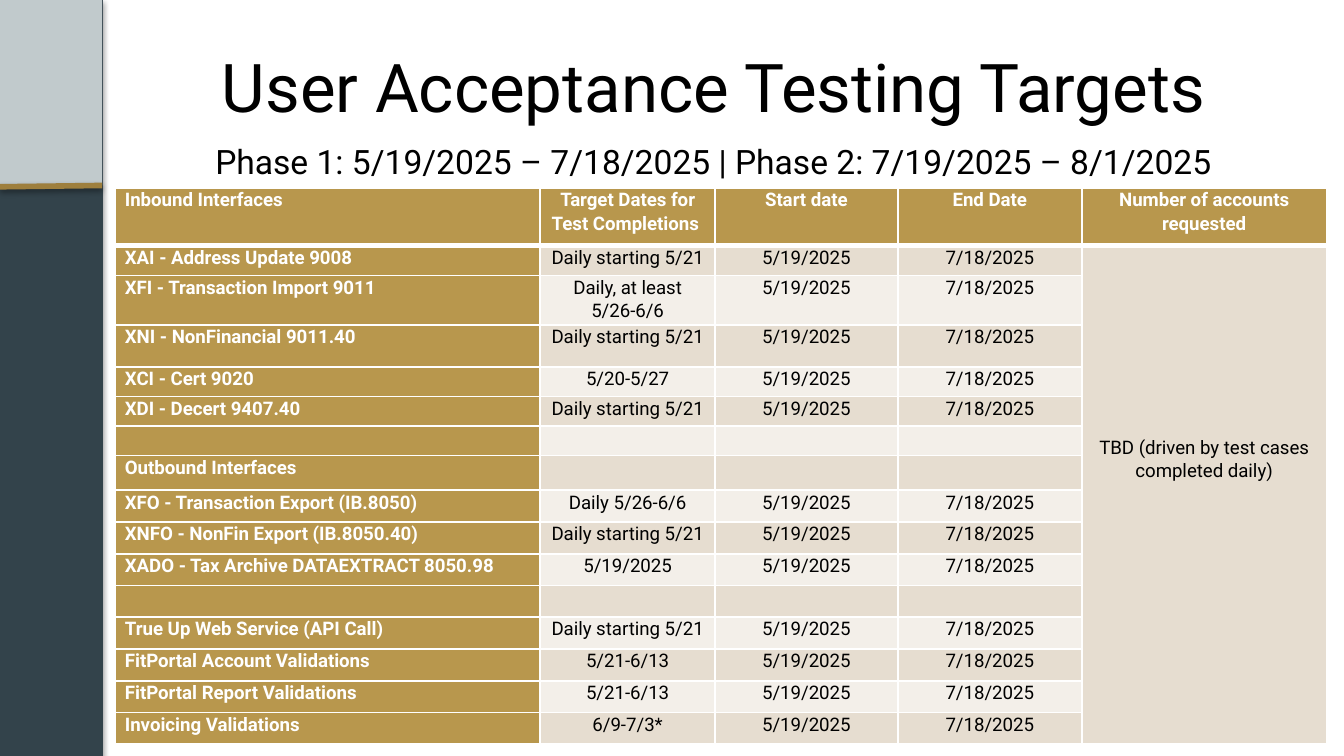
from dataclasses import dataclass

from lxml import etree
from pptx import Presentation
from pptx.dml.color import RGBColor
from pptx.enum.shapes import MSO_CONNECTOR, MSO_SHAPE
from pptx.enum.text import MSO_ANCHOR, PP_ALIGN
from pptx.oxml import parse_xml
from pptx.oxml.ns import nsdecls
from pptx.util import Inches, Pt

FONT = "Roboto"
SLIDE_WIDTH = 10
SLIDE_HEIGHT = SLIDE_WIDTH * 9 / 16
COLORS = {
    "slate": "33434B",
    "mist": "C1CACC",
    "bronze": "9E7F3D",
    "gold": "B8974D",
    "sand": "E6DDD0",
    "cream": "F3EFE9",
    "white": "FFFFFF",
    "black": "000000",
}


@dataclass
class Heading:
    text: str
    left: float
    top: float
    width: float
    height: float
    size: int
    anchor: MSO_ANCHOR


@dataclass
class Target:
    name: str
    dates: str = ""
    height: float = 0.22
    start: str = "5/19/2025"
    end: str = "7/18/2025"

    def values(self) -> list[str]:
        return [self.name, self.dates, self.start, self.end] if self.dates else [self.name, "", "", ""]


HEADINGS = [
    Heading("User Acceptance Testing Targets", 1.02, 0.17, 8.58, 0.94, 36, MSO_ANCHOR.MIDDLE),
    Heading("Phase 1: 5/19/2025 – 7/18/2025 | Phase 2: 7/19/2025 – 8/1/2025",
            0.86, 1, 8.9, 0.4, 18, MSO_ANCHOR.TOP),
]
COLUMN_TITLES = ["Inbound Interfaces", "Target Dates for Test Completions ", "Start date",
                 "End Date", "Number of accounts requested"]
COLUMN_WIDTHS = [3.16, 1.3, 1.36, 1.37, 1.82]
HEADER_HEIGHT = 0.43
EVEN_HEIGHT = 1.89 / 8
DAILY = "Daily starting 5/21"
TARGETS = [
    Target("XAI - Address Update 9008", DAILY),
    Target("XFI - Transaction Import 9011", "Daily, at least 5/26-6/6", 0.37),
    Target("XNI - NonFinancial 9011.40", DAILY, 0.31),
    Target("XCI - Cert 9020", "5/20-5/27"),
    Target("XDI - Decert 9407.40", DAILY),
    Target(""),
    Target("Outbound Interfaces", height=0.26),
    Target("XFO - Transaction Export (IB.8050)", "Daily 5/26-6/6", EVEN_HEIGHT),
    Target("XNFO - NonFin Export (IB.8050.40)", DAILY, EVEN_HEIGHT),
    Target("XADO - Tax Archive DATAEXTRACT 8050.98", "5/19/2025", EVEN_HEIGHT),
    Target("", height=EVEN_HEIGHT),
    Target("True Up Web Service (API Call)", DAILY, EVEN_HEIGHT),
    Target("FitPortal Account Validations", "5/21-6/13", EVEN_HEIGHT),
    Target("FitPortal Report Validations", "5/21-6/13", EVEN_HEIGHT),
    Target("Invoicing Validations", "6/9-7/3*", EVEN_HEIGHT),
]


def rgb(name: str) -> RGBColor:
    return RGBColor.from_string(COLORS[name])


def add_shadow(shape, opacity: int, distance: float) -> None:
    shape._element.spPr.append(parse_xml(
        f'<a:effectLst {nsdecls("a")}><a:outerShdw blurRad="{Pt(3.1)}" dist="{Pt(distance)}" '
        f'dir="5400000" rotWithShape="0"><a:srgbClr val="{COLORS["black"]}">'
        f'<a:alpha val="{opacity * 1000}"/></a:srgbClr></a:outerShdw></a:effectLst>'))


def add_panel(slide, height: float, color: str):
    panel = slide.shapes.add_shape(MSO_SHAPE.RECTANGLE, 0, 0, Inches(0.76), Inches(height))
    panel.fill.solid()
    panel.fill.fore_color.rgb = rgb(color)
    panel.line.fill.background()
    return panel


def add_sidebar(slide) -> None:
    column = add_panel(slide, SLIDE_HEIGHT, "slate")
    column.line.color.rgb = rgb("slate")
    column.line.width = Pt(0.75)
    add_shadow(column, 35, 1.8)
    add_panel(slide, 1.38, "mist").shadow.inherit = False
    divider = slide.shapes.add_connector(
        MSO_CONNECTOR.STRAIGHT, 0, Inches(1.39), Inches(0.76), Inches(1.38))
    divider.line.color.rgb = rgb("bronze")
    divider.line.width = Pt(3)
    add_shadow(divider, 38, 1.6)


def style_font(font, size: int, color: str, bold: bool = False) -> None:
    font.name = FONT
    font.size = Pt(size)
    font.bold = bold
    font.color.rgb = rgb(color)


def add_heading(slide, heading: Heading) -> None:
    box = slide.shapes.add_textbox(Inches(heading.left), Inches(heading.top),
                                   Inches(heading.width), Inches(heading.height))
    frame = box.text_frame
    frame.word_wrap = True
    frame.vertical_anchor = heading.anchor
    frame.text = heading.text
    paragraph = frame.paragraphs[0]
    paragraph.alignment = PP_ALIGN.CENTER
    style_font(paragraph.runs[0].font, heading.size, "black")


def set_borders(cell, row: int) -> None:
    properties = cell._tc.get_or_add_tcPr()
    widths = {"lnL": 1, "lnR": 1, "lnT": 3 if row == 1 else 1, "lnB": 3 if row == 0 else 1}
    for tag, width in widths.items():
        border = etree.SubElement(properties, f"{{{properties.nsmap['a']}}}{tag}", w=str(Pt(width)))
        border.append(parse_xml(
            f'<a:solidFill {nsdecls("a")}><a:srgbClr val="{COLORS["white"]}"/></a:solidFill>'))


def fill_cell(cell, text: str, row: int, column: int) -> None:
    is_label = row == 0 or column == 0
    set_borders(cell, row)
    cell.fill.solid()
    cell.fill.fore_color.rgb = rgb("gold" if is_label else "sand" if row % 2 else "cream")
    cell.margin_left = cell.margin_right = Inches(0.07)
    cell.margin_top = cell.margin_bottom = 0
    cell.text_frame.text = text
    paragraph = cell.text_frame.paragraphs[0]
    paragraph.alignment = PP_ALIGN.CENTER if column else PP_ALIGN.LEFT
    paragraph.line_spacing = 1.07
    paragraph.space_after = Pt(8)
    for font in [paragraph.font, *(run.font for run in paragraph.runs)]:
        style_font(font, 10, "white" if is_label else "black", is_label)


def add_targets_table(slide) -> None:
    heights = [HEADER_HEIGHT] + [target.height for target in TARGETS]
    rows = [COLUMN_TITLES] + [target.values() + [""] for target in TARGETS]
    rows[1][-1] = "TBD (driven by test cases completed daily)"
    table = slide.shapes.add_table(
        len(rows), len(COLUMN_WIDTHS), Inches(0.86), Inches(1.4),
        Inches(sum(COLUMN_WIDTHS)), Inches(sum(heights))).table
    for column, width in zip(table.columns, COLUMN_WIDTHS):
        column.width = Inches(width)
    for row, height in zip(table.rows, heights):
        row.height = Inches(height)
    for row_index, values in enumerate(rows):
        for column_index, text in enumerate(values):
            fill_cell(table.cell(row_index, column_index), text, row_index, column_index)
    accounts = table.cell(1, 4)
    accounts.merge(table.cell(len(TARGETS), 4))
    accounts.margin_top = Inches(1.41)


def main() -> None:
    presentation = Presentation()
    presentation.slide_width = Inches(SLIDE_WIDTH)
    presentation.slide_height = Inches(SLIDE_HEIGHT)
    slide = presentation.slides.add_slide(presentation.slide_layouts[6])
    add_sidebar(slide)
    for heading in HEADINGS:
        add_heading(slide, heading)
    add_targets_table(slide)
    presentation.save("out.pptx")


if __name__ == "__main__":
    main()
